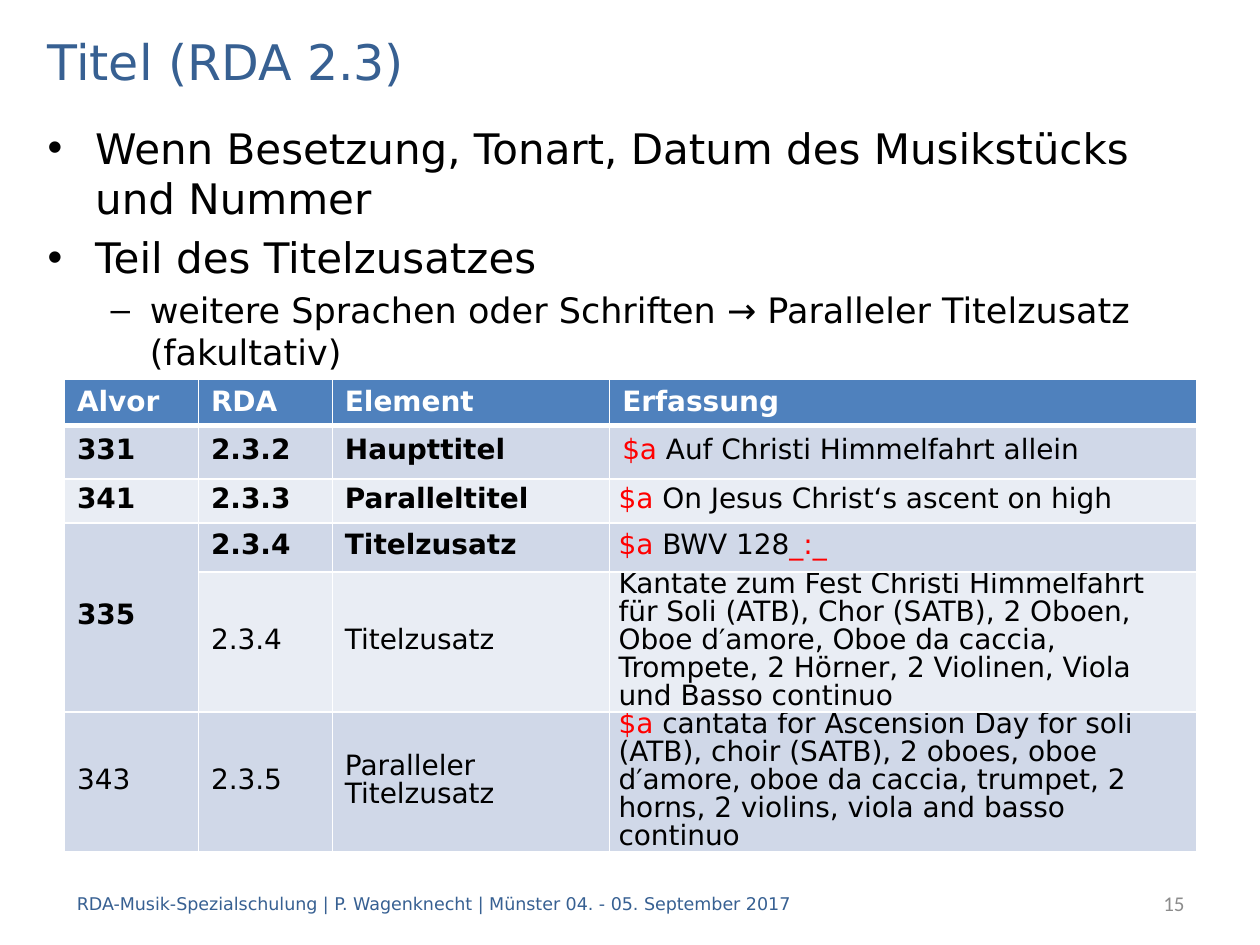
import pptx
import pptx.dml.color
import pptx.enum.text
import pptx.oxml
import pptx.oxml.ns
import pptx.util
from pptx.util import Cm

BLUE, RED, BLACK, WHITE, GREY = "376092", "FF0000", "000000", "FFFFFF", "8C8C8C"
FONT = "DejaVu Sans"
MIDDLE = pptx.enum.text.MSO_ANCHOR.MIDDLE
LEFT, RIGHT = pptx.enum.text.PP_ALIGN.LEFT, pptx.enum.text.PP_ALIGN.RIGHT
RED_PIECES = ("$a", "$a ", "_:_")


def colour(value):
    return pptx.dml.color.RGBColor.from_string(value)


def write(para, pieces, tint, **look):
    """Add one span per piece; subfield codes and separators turn red."""
    for piece in pieces:
        span = para.add_run()
        span.text = piece
        for name, value in {"name": FONT, **look}.items():
            setattr(span.font, name, value)
        span.font.color.rgb = colour(RED if piece in RED_PIECES else tint)


deck = pptx.Presentation()
deck.slide_width, deck.slide_height = Cm(25.4), Cm(19.05)
page = deck.slides.add_slide(deck.slide_layouts[5])

# Title
title = page.shapes.title
place = {"left": Cm(0.71), "top": Cm(0.51), "width": Cm(24), "height": Cm(1.42)}
for name, value in place.items():
    setattr(title, name, value)
title.text_frame.vertical_anchor = MIDDLE
title.text_frame.paragraphs[0].alignment = LEFT
write(title.text_frame.paragraphs[0], ["Titel (RDA 2.3)"], BLUE, size=pptx.util.Pt(28))

# Bulleted text: level, bullet, left margin, hanging indent, size, wording
points = [
    (0, "•", 0.96, 0.96, 24, "Wenn Besetzung, Tonart, Datum des Musikstücks und Nummer"),
    (0, "•", 0.96, 0.96, 24, "Teil des Titelzusatzes"),
    (1, "–", 2.06, 0.79, 20,
     "weitere Sprachen oder Schriften → Paralleler Titelzusatz (fakultativ)"),
]
box = page.shapes.add_textbox(Cm(0.71), Cm(2.34), Cm(24), Cm(15.19))
box.text_frame.word_wrap = True
for index, (level, bullet, margin, hanging, size, wording) in enumerate(points):
    para = box.text_frame.add_paragraph() if index else box.text_frame.paragraphs[0]
    para.level = level
    para.space_before = pptx.util.Pt(size * 0.2)
    props = para._p.get_or_add_pPr()
    props.set("marL", str(Cm(margin)))
    props.set("indent", str(-Cm(hanging)))
    for tag, key, value in (("buFont", "typeface", "Arial"), ("buChar", "char", bullet)):
        mark = pptx.oxml.ns.qn("a:" + tag)
        props.append(props.makeelement(mark, {key: value}))
    write(para, [wording], BLACK, size=pptx.util.Pt(size))

# Table
rows = [
    [["Alvor"], ["RDA"], ["Element"], ["Erfassung"]],
    [["331"], ["2.3.2"], ["Haupttitel"], ["$a", " Auf Christi Himmelfahrt allein"]],
    [["341"], ["2.3.3"], ["Paralleltitel"], ["$a", " On Jesus Christ‘s ascent on high"]],
    [["335"], ["2.3.4"], ["Titelzusatz"], ["$a", " BWV 128", "_:_"]],
    [[], ["2.3.4"], ["Titelzusatz"],
     ["Kantate zum Fest Christi Himmelfahrt für Soli (ATB), Chor (SATB), 2 Oboen, "
      "Oboe d′amore, Oboe da caccia, Trompete, 2 Hörner, 2 Violinen, Viola und "
      "Basso continuo"]],
    [["343"], ["2.3.5"], ["Paralleler Titelzusatz"],
     ["$a ", "cantata for Ascension Day for soli (ATB), choir (SATB), 2 oboes, "
      "oboe d′amore, oboe da caccia, trumpet, 2 horns, 2 violins, viola and "
      "basso continuo"]],
]
widths = [2.7, 2.7, 5.59, 11.84]
heights = [0.86, 1.07, 0.89, 0.99, 2.31, 2.54]
table = page.shapes.add_table(
    len(rows), len(widths), Cm(1.3), Cm(7.65), Cm(sum(widths)), Cm(sum(heights))
).table
for column, width in zip(table.columns, widths):
    column.width = Cm(width)
for row, height in zip(table.rows, heights):
    row.height = Cm(height)

for r, row in enumerate(rows):
    for c, pieces in enumerate(row):
        cell = table.cell(r, c)
        para = cell.text_frame.paragraphs[0]
        if r:
            cell.vertical_anchor = MIDDLE
            spacing = {"line_spacing": 16, "space_before": 6, "space_after": 6}
            for name, value in spacing.items():
                setattr(para, name, pptx.util.Pt(value))
        if r > 1 and c == 3:
            margins = {"left": 0.18, "top": 0, "right": 0.18, "bottom": 0}
            for side, value in margins.items():
                setattr(cell, "margin_" + side, Cm(value))
        bold = r == 0 or (r < 4 and c < 3)
        write(para, pieces, BLACK if r else WHITE, size=pptx.util.Pt(16), bold=bold)

        # White borders, thicker below the header
        props = cell._tc.get_or_add_tcPr()
        thick = {"T": r == 1, "B": r == 0}
        for side in "LRTB":
            width = pptx.util.Pt(3 if thick.get(side) else 1)
            props.append(pptx.oxml.parse_xml(
                f'<a:ln{side} {pptx.oxml.ns.nsdecls("a")} w="{width}"><a:solidFill>'
                f'<a:srgbClr val="{WHITE}"/></a:solidFill></a:ln{side}>'))
        cell.fill.solid()
        band = "D0D8E8" if r % 2 else "E9EDF4"
        cell.fill.fore_color.rgb = colour(band if r else "4F81BD")
table.cell(3, 0).merge(table.cell(4, 0))

# Footer and page number
footers = [
    (1.3, 21, LEFT, BLUE, FONT, 10,
     "RDA-Musik-Spezialschulung | P. Wagenknecht | Münster 04. - 05. September 2017"),
    (20.09, 4.04, RIGHT, GREY, "Calibri", 12, "15"),
]
for left, width, alignment, tint, font, size, wording in footers:
    box = page.shapes.add_textbox(Cm(left), Cm(17.7), Cm(width), Cm(1.02))
    box.text_frame.word_wrap = True
    box.text_frame.vertical_anchor = MIDDLE
    para = box.text_frame.paragraphs[0]
    para.alignment = alignment
    write(para, [wording], tint, name=font, size=pptx.util.Pt(size))

deck.save("out.pptx")
